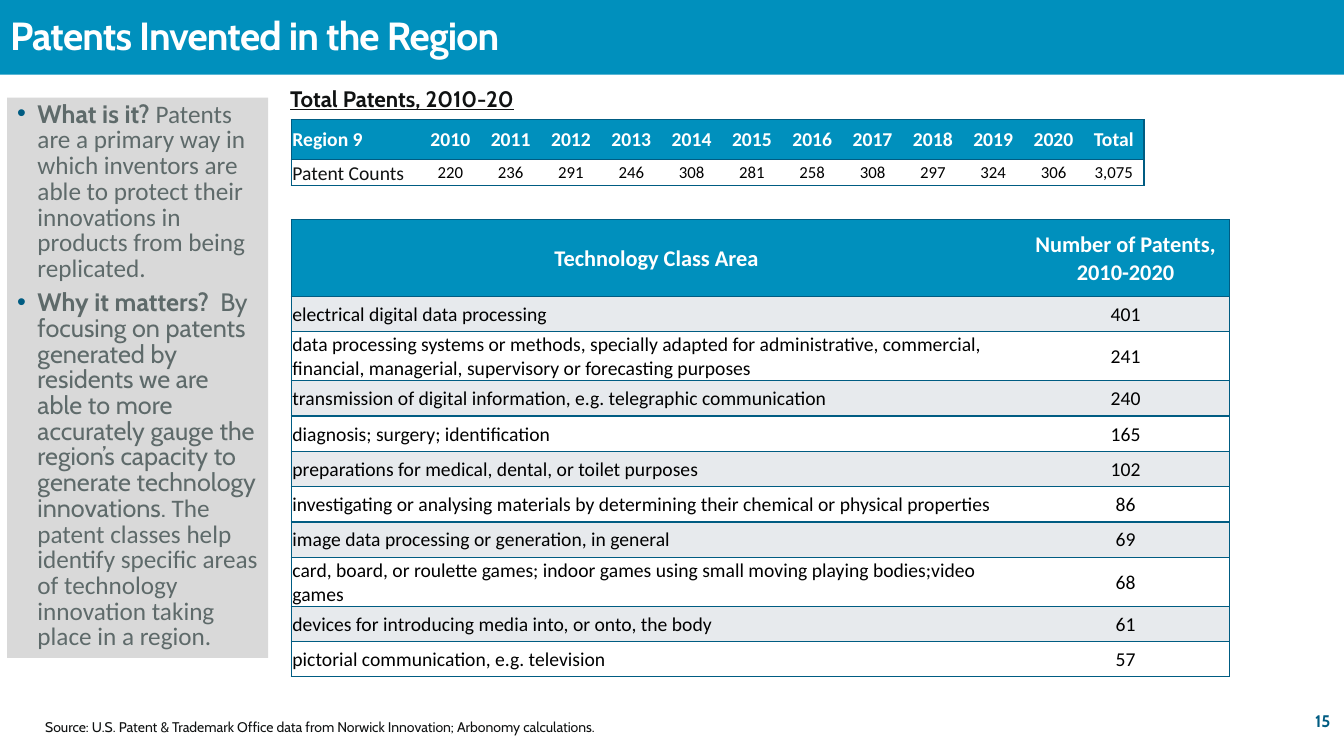
from dataclasses import dataclass

from lxml import etree
from pptx import Presentation
from pptx import util as u
from pptx.dml import color
from pptx.enum import text as t
from pptx.oxml import ns

TITLE = "Patents Invented in the Region"
HEAD = "Total Patents, 2010-20"
SOURCE = ("Source: U.S. Patent & Trademark Office data from Norwick Innovation; "
          "Arbonomy calculations.")
PAGE = "15"
NOTES = [
    [("What is it? ", "Cabin", True),
     ("Patents are a primary way in which inventors are able to protect their "
      "innovations in products from being replicated.", "Calibri", False)],
    [("Why it matters?  ", "Cabin", True),
     ("By focusing on patents generated by residents we are able to more accurately "
      "gauge the region’s capacity to generate technology innovations. ", "Cabin", False),
     ("The patent classes help identify specific areas of technology innovation "
      "taking place in a region.", "Calibri", False)],
]
COUNTS = [
    ["Region 9", *map(str, range(2010, 2021)), "Total"],
    ["Patent Counts", "220", "236", "291", "246", "308", "281", "258", "308",
     "297", "324", "306", "3,075"],
]
AREAS = [
    ("Technology Class Area", "Number of Patents, 2010-2020"),
    ("electrical digital data processing", "401"),
    ("data processing systems or methods, specially adapted for administrative, "
     "commercial, financial, managerial, supervisory or forecasting purposes", "241"),
    ("transmission of digital information, e.g. telegraphic communication", "240"),
    ("diagnosis; surgery; identification", "165"),
    ("preparations for medical, dental, or toilet purposes", "102"),
    ("investigating or analysing materials by determining their chemical or "
     "physical properties", "86"),
    ("image data processing or generation, in general", "69"),
    ("card, board, or roulette games; indoor games using small moving playing "
     "bodies;video games", "68"),
    ("devices for introducing media into, or onto, the body", "61"),
    ("pictorial communication, e.g. television", "57"),
]


@dataclass(frozen=True)
class Theme:
    blue: str = "0090BD"
    navy: str = "005C82"
    ink: str = "101212"
    black: str = "000000"
    white: str = "FFFFFF"
    band: str = "E7EAED"
    panel: str = "D9D9D9"
    grey: str = "5E6A6A"
    title: int = 28
    body: int = 18
    head: int = 16
    cell: int = 14
    small: int = 12
    source: int = 10


LOOK = Theme()
LEFT, MID, RIGHT = t.PP_ALIGN.LEFT, t.PP_ALIGN.CENTER, t.PP_ALIGN.RIGHT
CENTRE, BASE = t.MSO_ANCHOR.MIDDLE, t.MSO_ANCHOR.BOTTOM


def paint(item, tint):
    item.fill.solid()
    item.fill.fore_color.rgb = color.RGBColor.from_string(tint)


def node(parent, tag, **attrs):
    return etree.SubElement(parent, ns.qn(tag), attrs)


def write(frame, text, size, tint, font="Cabin", bold=False, line=False,
          align=LEFT, lead=None, after=0, track=None, mark=None):
    paras = [[(text, font, bold)]] if isinstance(text, str) else text
    for i, parts in enumerate(paras):
        para = frame.add_paragraph() if i else frame.paragraphs[0]
        para.alignment = align
        para.line_spacing = lead
        para.space_before, para.space_after = u.Pt(0), u.Pt(after)
        for words, face, heavy in parts:
            run = para.add_run()
            run.text = words
            run.font.name, run.font.size = face, u.Pt(size)
            run.font.bold, run.font.underline = heavy, line
            run.font.color.rgb = color.RGBColor.from_string(tint)
            if track:
                run.font._element.set("spc", str(track))
        if mark:
            props = para._p.get_or_add_pPr()
            props.set("marL", str(u.Cm(0.51)))
            props.set("indent", str(u.Cm(-0.51)))
            node(node(props, "a:buClr"), "a:srgbClr", val=mark)
            node(props, "a:buFont", typeface="Arial")
            node(props, "a:buChar", char="•")


def place(shape, box, anchor=t.MSO_ANCHOR.TOP):
    shape.left, shape.top, shape.width, shape.height = map(u.Cm, box)
    frame = shape.text_frame
    frame.word_wrap = True
    frame.auto_size = t.MSO_AUTO_SIZE.NONE
    frame.vertical_anchor = anchor
    return frame


def label(slide, box, anchor=t.MSO_ANCHOR.TOP):
    return place(slide.shapes.add_textbox(0, 0, 0, 0), box, anchor)


def edge(cell, sides):
    props = cell._tc.get_or_add_tcPr()
    for side in "LRTB":
        rule = node(props, f"a:ln{side}", w=str(u.Pt(1)))
        if side in sides:
            node(node(rule, "a:solidFill"), "a:srgbClr", val=LOOK.navy)
        else:
            node(rule, "a:noFill")


def grid(slide, rows, spot, widths, heights, style):
    shape = slide.shapes.add_table(len(rows), len(widths), *map(u.Cm, spot),
                                   u.Cm(sum(widths)), u.Cm(sum(heights)))
    table = shape.table
    table.horz_banding = False
    for col, width in zip(table.columns, widths):
        col.width = u.Cm(width)
    for r, (row, height) in enumerate(zip(rows, heights)):
        table.rows[r].height = u.Cm(height)
        for c, words in enumerate(row):
            cell = table.cell(r, c)
            edge(cell, "TB" + "L" * (c == 0) + "R" * (c == len(row) - 1))
            fill, anchor, form = style(r, c)
            paint(cell, fill)
            cell.vertical_anchor = anchor
            cell.margin_left = cell.margin_right = cell.margin_top = u.Cm(0.03)
            cell.margin_bottom = 0
            write(cell.text_frame, words, font="Calibri", **form)


def count_style(r, c):
    align = MID if c else LEFT
    if r == 0:
        return LOOK.blue, CENTRE, dict(size=LOOK.cell, tint=LOOK.white, bold=True, align=align)
    if c == 0:
        return LOOK.white, BASE, dict(size=LOOK.cell, tint=LOOK.ink)
    return LOOK.white, CENTRE, dict(size=LOOK.small, tint=LOOK.black, align=align)


def area_style(r, c):
    if r == 0:
        return LOOK.blue, CENTRE, dict(size=LOOK.head, tint=LOOK.white, bold=True, align=MID)
    fill = LOOK.band if r % 2 else LOOK.white
    return fill, CENTRE, dict(size=LOOK.cell, tint=LOOK.black, align=MID if c else LEFT)


def main():
    deck = Presentation()
    deck.slide_width, deck.slide_height = u.Cm(33.87), u.Cm(19.05)
    slide = deck.slides.add_slide(deck.slide_layouts[1])
    title, body = slide.placeholders

    paint(title, LOOK.blue)
    write(place(title, (0, 0, 33.87, 1.88), CENTRE), TITLE, LOOK.title, LOOK.white,
          bold=True, lead=0.9, track=-60)
    paint(body, LOOK.panel)
    write(place(body, (0.18, 2.46, 6.58, 14.12)), NOTES, LOOK.body, LOOK.grey,
          lead=0.85, after=6, mark=LOOK.navy)

    write(label(slide, (7.06, 2.01, 6.38, 0.94)), HEAD, LOOK.head, LOOK.ink,
          bold=True, line=True)
    grid(slide, COUNTS, (7.34, 3.02), [3.25] + [1.52] * 12, [0.99, 0.66], count_style)
    grid(slide, AREAS, (7.34, 5.54), [18.41, 5.23], [1.93] + [0.89] * 10, area_style)

    write(label(slide, (0.89, 17.98, 32.08, 0.69)), SOURCE, LOOK.source, LOOK.ink)
    write(label(slide, (29.54, 17.65, 4.24, 1.02), CENTRE), PAGE, LOOK.small, LOOK.navy,
          bold=True, align=RIGHT)
    deck.save("out.pptx")


if __name__ == "__main__":
    main()
